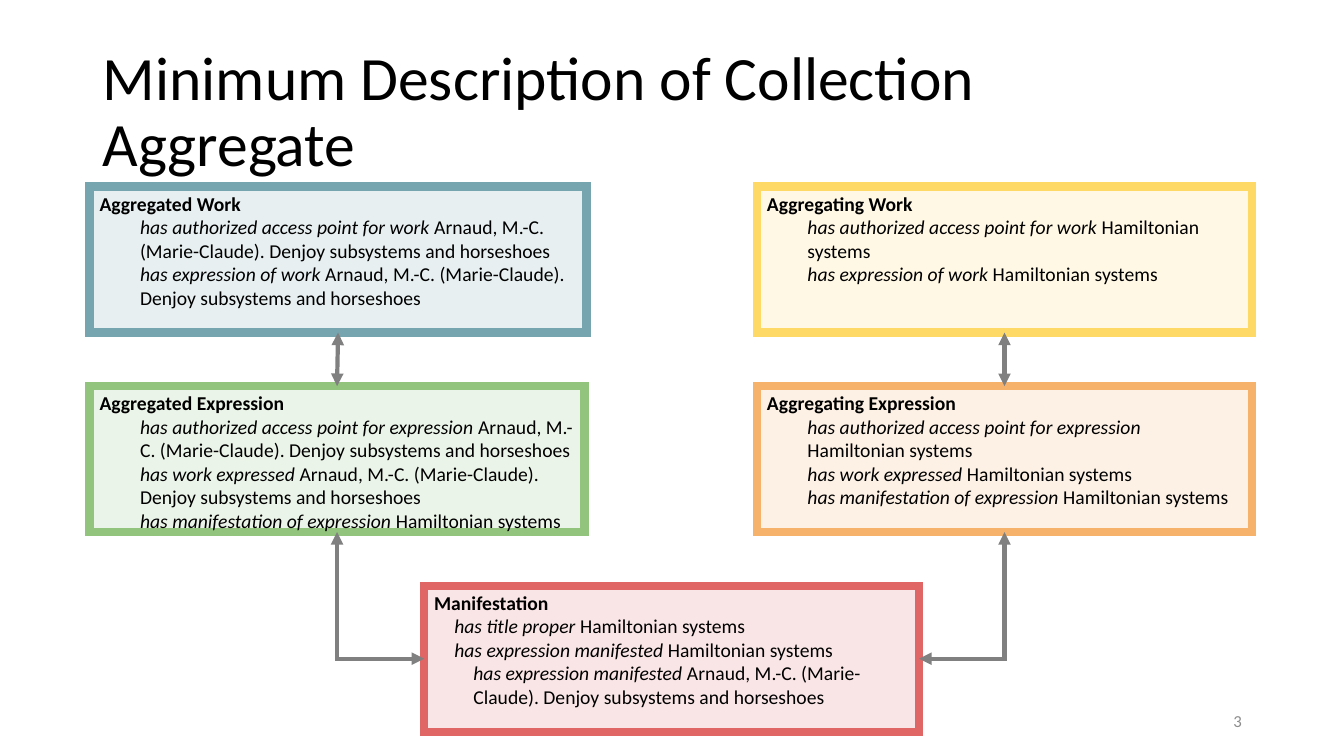
import dataclasses

import pptx
import pptx.dml.color
import pptx.enum.shapes
import pptx.enum.text
import pptx.oxml
import pptx.oxml.ns
import pptx.util
from pptx.util import Cm, Pt

ANCHOR = pptx.enum.text.MSO_ANCHOR
ALIGN = pptx.enum.text.PP_ALIGN
TOP, LEFT, BOTTOM, RIGHT = range(4)


@dataclasses.dataclass(frozen=True)
class Theme:
    """Colours and type sizes of the slide."""
    font: str = "Calibri"
    ink: str = "000000"
    muted: str = "8C8C8C"
    arrow: str = "808080"
    blue: tuple = ("D0E0E3", "76A5AF")
    yellow: tuple = ("FFF2CC", "FFD966")
    green: tuple = ("D9EAD3", "93C47D")
    orange: tuple = ("FCE5CD", "F6B26B")
    red: tuple = ("F4CCCC", "E06666")
    title_size: int = 44
    body_size: int = 14
    number_size: int = 12
    border: int = 6
    arrow_width: int = 3


THEME = Theme()
COLUMN_LEFT, COLUMN_MIDDLE, COLUMN_RIGHT = 2.26, 10.69, 19.08
ROW_TOPS = [4.7 + 5.03 * row for row in range(3)]
BOX_WIDTH, BOX_HEIGHT = 12.47, 3.68
INDENT, SMALL_INDENT = 1.02, 0.51
ARTICLE = "Arnaud, M.-C. (Marie-Claude). Denjoy subsystems and horseshoes"
VOLUME = "Hamiltonian systems"
WORK_POINT = "has authorized access point for work"
EXPRESSION_POINT = "has authorized access point for expression"


def rgb(code):
    """Return the colour for a hex code."""
    return pptx.dml.color.RGBColor.from_string(code)


def add_xml(parent, tag, **attributes):
    """Append a DrawingML element with the given attributes."""
    element = pptx.oxml.parse_xml(f"<a:{tag} {pptx.oxml.ns.nsdecls('a')}/>")
    for name, value in attributes.items():
        element.set(name, value)
    parent.append(element)


def style(span, size, color, bold=False, italic=False):
    """Set the font of one run."""
    span.font.name = THEME.font
    span.font.size = Pt(size)
    span.font.color.rgb = rgb(color)
    span.font.bold = bold
    span.font.italic = italic


def add_line(page, box, text, size, color, align=ALIGN.LEFT, spacing=1.0):
    """Place a vertically centred paragraph in a text box."""
    frame = page.shapes.add_textbox(*map(Cm, box)).text_frame
    frame.word_wrap = True
    frame.vertical_anchor = ANCHOR.MIDDLE
    frame.text = text
    para = frame.paragraphs[0]
    para.alignment = align
    para.line_spacing = spacing
    style(para.runs[0], size, color)


def add_entity(page, box, colors, heading, relations):
    """Draw an entity box with its heading and (relation, value, indent) lines."""
    entity = page.shapes.add_shape(pptx.enum.shapes.MSO_SHAPE.RECTANGLE, *map(Cm, box))
    entity.shadow.inherit = False
    fill, border = colors
    entity.fill.solid()
    entity.fill.fore_color.rgb = rgb(fill)
    add_xml(entity.fill._xPr.find(".//" + pptx.oxml.ns.qn("a:srgbClr")), "alpha", val="50000")
    entity.line.color.rgb = rgb(border)
    entity.line.width = Pt(THEME.border)
    add_xml(entity.line._get_or_add_ln(), "miter", lim="800000")
    frame = entity.text_frame
    frame.word_wrap = True
    frame.vertical_anchor = ANCHOR.TOP
    frame.text = heading
    frame.paragraphs[0].alignment = ALIGN.LEFT
    style(frame.paragraphs[0].runs[0], THEME.body_size, THEME.ink, bold=True)
    for relation, value, indent in relations:
        para = frame.add_paragraph()
        para.alignment = ALIGN.LEFT
        para._p.get_or_add_pPr().set("marL", str(Cm(indent)))
        for text, italic in ((relation, True), (" " + value, False)):
            span = para.add_run()
            span.text = text
            style(span, THEME.body_size, THEME.ink, italic=italic)
    return entity


def add_arrow(page, start, start_side, end, end_side, bent=False):
    """Join two entities with a double-headed arrow, straight or with one bend."""
    kinds = pptx.enum.shapes.MSO_CONNECTOR
    arrow = page.shapes.add_connector(kinds.ELBOW if bent else kinds.STRAIGHT, 0, 0, 0, 0)
    arrow.begin_connect(start, start_side)
    arrow.end_connect(end, end_side)
    properties = arrow._element.spPr
    if bent:
        properties.find(pptx.oxml.ns.qn("a:prstGeom")).set("prst", "bentConnector2")
    arrow.line.color.rgb = rgb(THEME.arrow)
    arrow.line.width = Pt(THEME.arrow_width)
    line = arrow.line._get_or_add_ln()
    add_xml(line, "miter", lim="800000")
    add_xml(line, "headEnd", type="triangle")
    add_xml(line, "tailEnd", type="triangle")
    add_xml(properties, "effectLst")


def add_diagram(page):
    """Draw the five entities and the arrows between them."""
    work_top, expression_top, manifestation_top = ROW_TOPS
    size = (BOX_WIDTH, BOX_HEIGHT)
    aggregated_work = add_entity(
        page, (COLUMN_LEFT, work_top, 12.52, BOX_HEIGHT), THEME.blue, "Aggregated Work",
        [(WORK_POINT, ARTICLE, INDENT), ("has expression of work", ARTICLE, INDENT)])
    aggregating_work = add_entity(
        page, (COLUMN_RIGHT, work_top, *size), THEME.yellow, "Aggregating Work",
        [(WORK_POINT, VOLUME, INDENT), ("has expression of work", VOLUME, INDENT)])
    aggregated_expression, aggregating_expression = [
        add_entity(page, (left, expression_top, *size), colors, heading,
                   [(EXPRESSION_POINT, work, INDENT),
                    ("has work expressed", work, INDENT),
                    ("has manifestation of expression", VOLUME, INDENT)])
        for left, colors, heading, work in (
            (COLUMN_LEFT, THEME.green, "Aggregated Expression", ARTICLE),
            (COLUMN_RIGHT, THEME.orange, "Aggregating Expression", VOLUME))]
    manifestation = add_entity(
        page, (COLUMN_MIDDLE, manifestation_top, *size), THEME.red, "Manifestation",
        [("has title proper", VOLUME, SMALL_INDENT),
         ("has expression manifested", VOLUME, SMALL_INDENT),
         ("has expression manifested", ARTICLE, 0.99)])
    for work, expression, side in (
            (aggregated_work, aggregated_expression, LEFT),
            (aggregating_work, aggregating_expression, RIGHT)):
        add_arrow(page, manifestation, side, expression, BOTTOM, bent=True)
        add_arrow(page, work, BOTTOM, expression, TOP)


def main():
    """Build and save the deck."""
    deck = pptx.Presentation()
    deck.slide_width, deck.slide_height = Cm(33.87), Cm(19.05)
    page = deck.slides.add_slide(deck.slide_layouts[6])
    add_line(page, (2.34, 1.02, 29.21, 3.68), "Minimum Description of Collection Aggregate",
             THEME.title_size, THEME.ink, spacing=0.9)
    add_line(page, (23.93, 17.65, 7.62, 1.02), "3", THEME.number_size, THEME.muted, ALIGN.RIGHT)
    add_diagram(page)
    deck.save("out.pptx")


if __name__ == "__main__":
    main()
